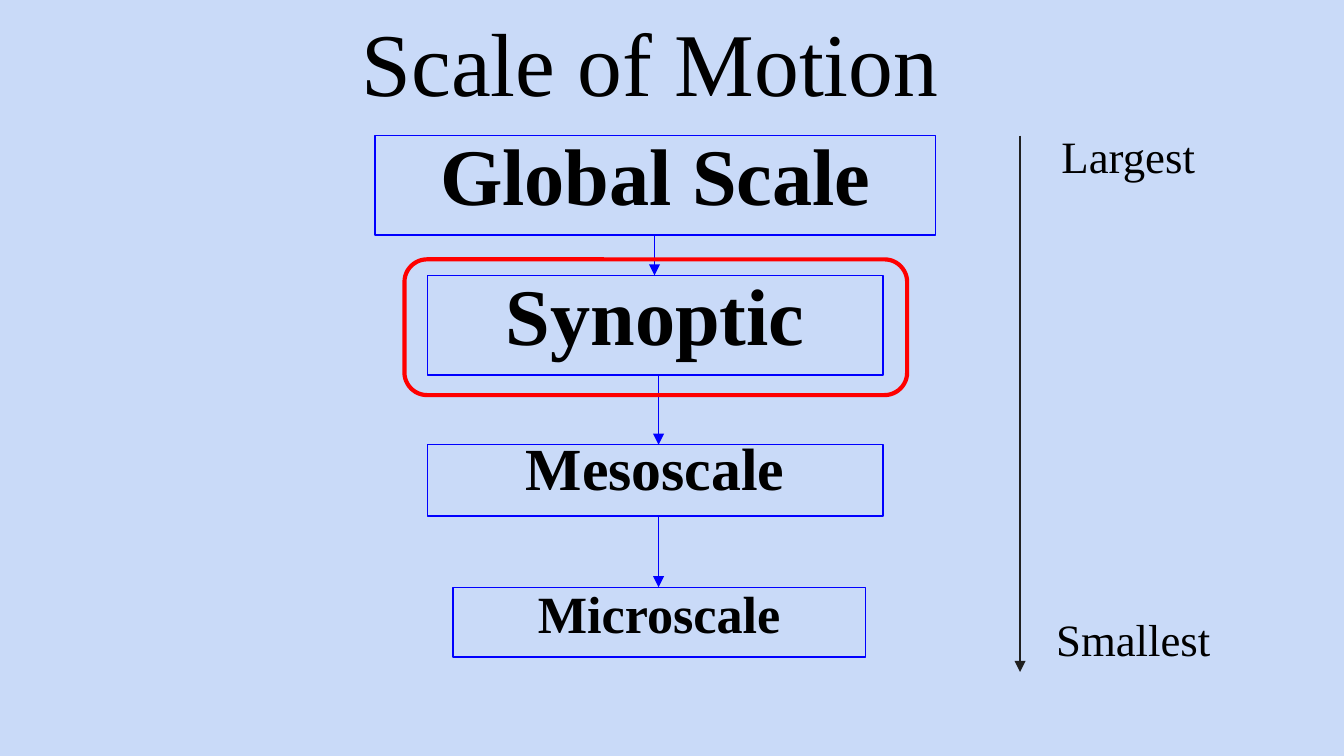
from pptx import Presentation
from pptx.dml.color import RGBColor
from pptx.enum.shapes import MSO_CONNECTOR, MSO_SHAPE
from pptx.enum.text import MSO_ANCHOR, MSO_AUTO_SIZE, PP_ALIGN
from pptx.oxml.ns import qn
from pptx.util import Inches, Pt
from lxml.etree import SubElement

BACK, BLUE, RED, DARK, BLACK = "C9DAF8", "0000FF", "FF0000", "202020", "000000"
TITLE = ("Scale of Motion", (2.59, 0, 6.02, 0.91), 48)
SCALES = [
    ("Global Scale", (2.79, 1.01, 4.17, 0.74), 43),
    ("Synoptic", (3.18, 2.05, 3.39, 0.74), 43),
    ("Mesoscale", (3.18, 3.31, 3.39, 0.53), 32),
    ("Microscale", (3.37, 4.37, 3.07, 0.52), 28),
]
LABELS = [
    ("Largest", (7.8, 0.91, 1.77, 0.5), 24),
    ("Smallest", (7.76, 4.5, 1.55, 0.5), 24),
]
LINKS = [4.87, 4.9, 4.9]
RING = (3.01, 1.93, 3.74, 1.01)
AXIS = (7.59, 1.01, 5)


def color(code):
    return RGBColor.from_string(code)


def place(box):
    return [Inches(n) for n in box]


def write(shape, text, size, bold=False, align=PP_ALIGN.LEFT,
          anchor=MSO_ANCHOR.TOP, pad=0.05):
    frame = shape.text_frame
    frame.text = text
    frame.word_wrap = True
    frame.auto_size = MSO_AUTO_SIZE.NONE
    frame.vertical_anchor = anchor
    frame.margin_left = frame.margin_right = Inches(0.1)
    frame.margin_top = frame.margin_bottom = Inches(pad)
    para = frame.paragraphs[0]
    para.alignment = align
    font = para.runs[0].font
    font.name, font.size, font.bold = "Times New Roman", Pt(size), bold
    font.color.rgb = color(BLACK)


def outline(kind, box, line, width, fill=None):
    shape = slide.shapes.add_shape(kind, *place(box))
    shape.shadow.inherit = False
    if fill:
        shape.fill.solid()
        shape.fill.fore_color.rgb = color(fill)
    else:
        shape.fill.background()
    shape.line.color.rgb = color(line)
    shape.line.width = Pt(width)
    return shape


def arrow(x, top, end, line):
    link = slide.shapes.add_connector(MSO_CONNECTOR.STRAIGHT, *place((x, top, x, end)))
    link.line.color.rgb = color(line)
    link.line.width = Pt(0.75)
    props = link._element.spPr
    SubElement(props.find(qn("a:ln")), qn("a:tailEnd"), type="triangle")
    SubElement(props, qn("a:effectLst"))


deck = Presentation()
deck.slide_width = Inches(10)
deck.slide_height = deck.slide_width * 9 // 16
slide = deck.slides.add_slide(deck.slide_layouts[5])
slide.background.fill.solid()
slide.background.fill.fore_color.rgb = color(BACK)

text, box, size = TITLE
title = slide.shapes.title
title.left, title.top, title.width, title.height = place(box)
write(title, text, size)

for text, box, size in SCALES:
    shape = outline(MSO_SHAPE.RECTANGLE, box, BLUE, 0.75, BACK)
    write(shape, text, size, True, PP_ALIGN.CENTER, MSO_ANCHOR.BOTTOM, 0.1)

for x, (_, above, _), (_, below, _) in zip(LINKS, SCALES, SCALES[1:]):
    arrow(x, above[1] + above[3], below[1], BLUE)

outline(MSO_SHAPE.ROUNDED_RECTANGLE, RING, RED, 2.25)
arrow(*AXIS, DARK)

for text, box, size in LABELS:
    write(slide.shapes.add_textbox(*place(box)), text, size)

deck.save("out.pptx")
